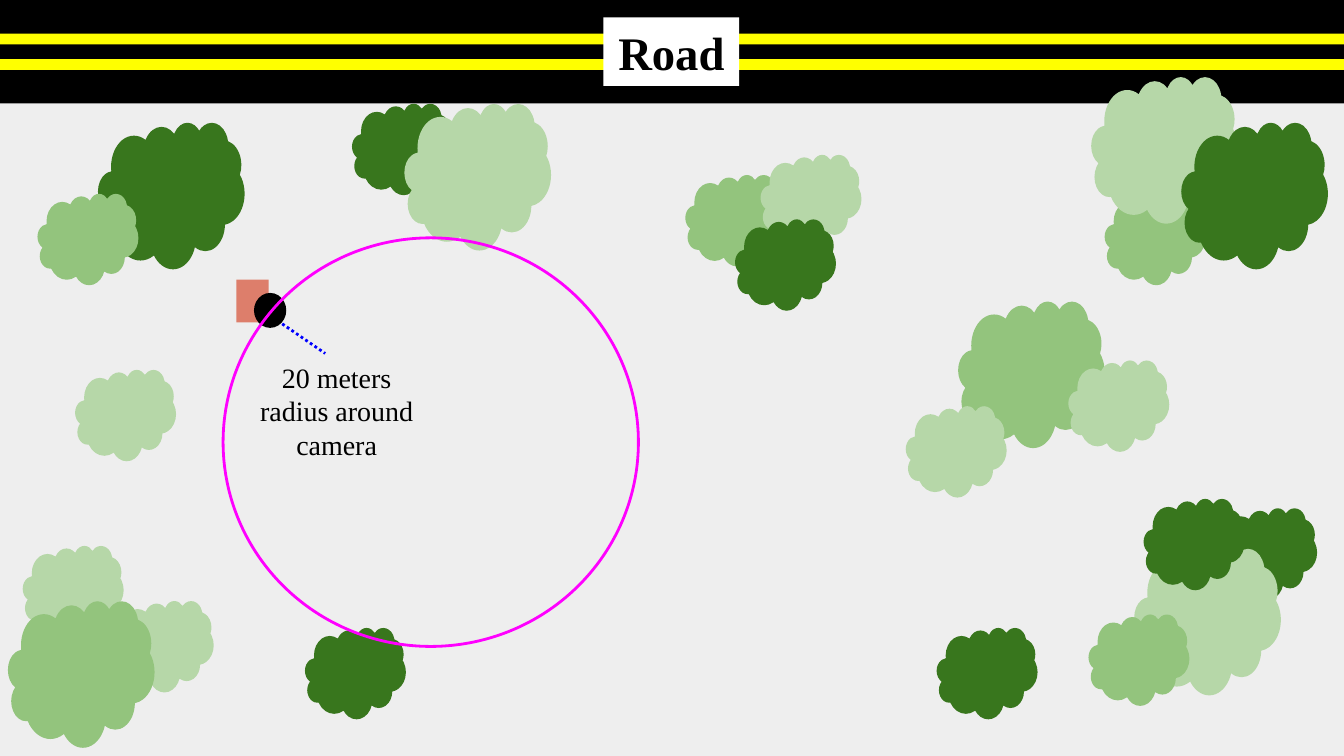
"""Draw a site plan with a road, shrubs and a camera's 20 meter radius."""
from lxml import etree
from pptx import Presentation, util as u
from pptx.dml.color import RGBColor
from pptx.enum import dml, shapes, text
from pptx.oxml.ns import qn

COLUMNS, ROWS = 100, 56.25
CELL = u.Inches(0.1)
BLACK = RGBColor(0x00, 0x00, 0x00)
WHITE = RGBColor(0xFF, 0xFF, 0xFF)
YELLOW = RGBColor(0xFF, 0xFF, 0x00)
BLUE = RGBColor(0x00, 0x00, 0xFF)
MAGENTA = RGBColor(0xFF, 0x00, 0xFF)
GROUND = RGBColor(0xEE, 0xEE, 0xEE)
SALMON = RGBColor(0xDD, 0x7E, 0x6B)
DARK = RGBColor(0x38, 0x76, 0x1D)
MEDIUM = RGBColor(0x93, 0xC4, 0x7D)
LIGHT = RGBColor(0xB6, 0xD7, 0xA8)
RECT, OVAL, CLOUD = (shapes.MSO_SHAPE.RECTANGLE, shapes.MSO_SHAPE.OVAL,
                     shapes.MSO_SHAPE.CLOUD)
BIG, SMALL = (10.9, 10.9), (7.5, 6.8)

deck = Presentation()
deck.slide_width, deck.slide_height = int(COLUMNS * CELL), int(ROWS * CELL)
plan = deck.slides.add_slide(deck.slide_layouts[6])
plan.background.fill.solid()
plan.background.fill.fore_color.rgb = GROUND


def add_area(kind, column, row, columns, rows, color=None):
    area = plan.shapes.add_shape(
        kind, *(int(n * CELL) for n in (column, row, columns, rows)))
    area.shadow.inherit = False
    area.line.fill.background()
    if color is None:
        area.fill.background()
    else:
        area.fill.solid()
        area.fill.fore_color.rgb = color
    return area


def write(frame, words, size, bold=False):
    frame.word_wrap = True
    frame.margin_left = frame.margin_right = CELL
    frame.margin_top = frame.margin_bottom = CELL
    line = frame.paragraphs[0]
    line.text = words
    line.alignment = text.PP_ALIGN.CENTER
    line.font.name, line.font.size, line.font.bold = "Times New Roman", u.Pt(size), bold
    line.font.color.rgb = BLACK


add_area(RECT, 0, 0, COLUMNS, 7.7, BLACK)
for stripe_row in (2.5, 4.4):
    add_area(RECT, 0, stripe_row, COLUMNS, 0.8, YELLOW)
road_sign = add_area(RECT, 44.9, 1.3, 10.1, 5.1, WHITE)
road_sign.text_frame.vertical_anchor = text.MSO_ANCHOR.MIDDLE
write(road_sign.text_frame, "Road", 25, bold=True)

shrubs = [
    (71.3, 22.4, BIG, MEDIUM), (1.7, 40.6, SMALL, LIGHT),
    (8.4, 44.7, SMALL, LIGHT), (90.5, 37.8, SMALL, DARK),
    (82.2, 14.4, SMALL, MEDIUM), (81.2, 5.7, BIG, LIGHT),
    (84.4, 40.8, BIG, LIGHT), (85.1, 37.1, SMALL, DARK),
    (81, 45.7, SMALL, MEDIUM), (22.7, 46.7, SMALL, DARK),
    (79.5, 26.8, SMALL, LIGHT), (67.4, 30.2, SMALL, LIGHT),
    (51, 13, SMALL, MEDIUM), (56.6, 11.5, SMALL, LIGHT),
    (54.7, 16.3, SMALL, DARK), (0.6, 44.7, BIG, MEDIUM),
    (87.9, 9.1, BIG, DARK), (7.3, 9.1, BIG, DARK),
    (2.8, 14.4, SMALL, MEDIUM), (5.6, 27.5, SMALL, LIGHT),
    (26.2, 7.7, SMALL, DARK), (30.1, 7.7, BIG, LIGHT),
    (69.7, 46.7, SMALL, DARK),
]
for column, row, spread, green in shrubs:
    add_area(CLOUD, column, row, *spread, green)

add_area(RECT, 17.6, 20.8, 2.4, 3.2, SALMON)
add_area(OVAL, 18.9, 21.8, 2.4, 2.6, BLACK)

sight_line = plan.shapes.add_connector(
    shapes.MSO_CONNECTOR.STRAIGHT, *(int(n * CELL) for n in (21, 24.1, 24.2, 26.3)))
sight_line.line.color.rgb = BLUE
sight_line.line.width = u.Pt(1.5)
sight_line.line.dash_style = dml.MSO_LINE.ROUND_DOT
etree.SubElement(sight_line._element.spPr, qn("a:effectLst"))

radius = add_area(OVAL, 16.6, 17.7, 30.9, 30.4)
radius.line.color.rgb = MAGENTA
radius.line.width = u.Pt(1.5)

radius_label = plan.shapes.add_textbox(
    *(int(n * CELL) for n in (17.6, 25.8, 14.9, 9.6))).text_frame
write(radius_label, "20 meters radius around camera", 15)
radius_label.auto_size = text.MSO_AUTO_SIZE.SHAPE_TO_FIT_TEXT

deck.save("out.pptx")
